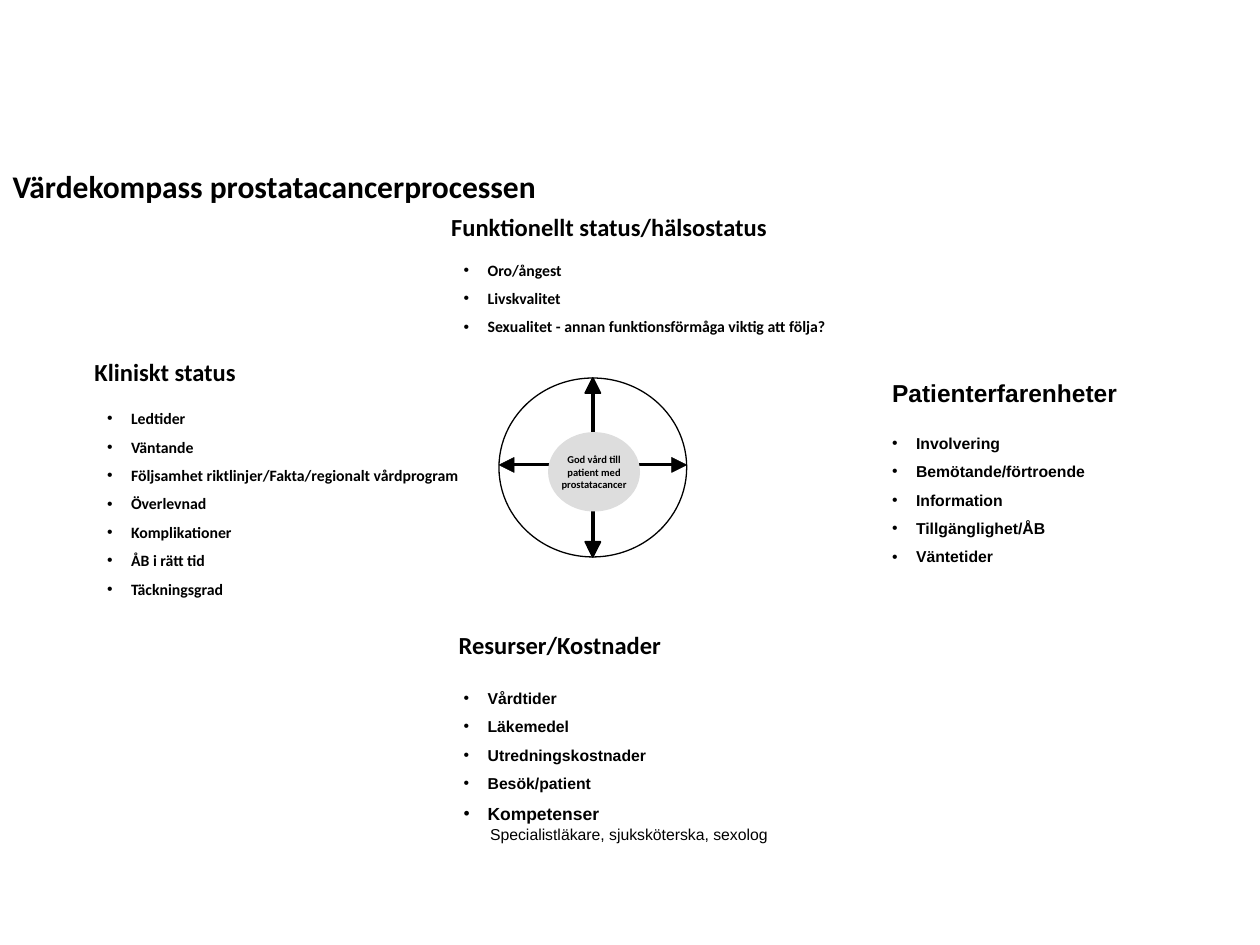
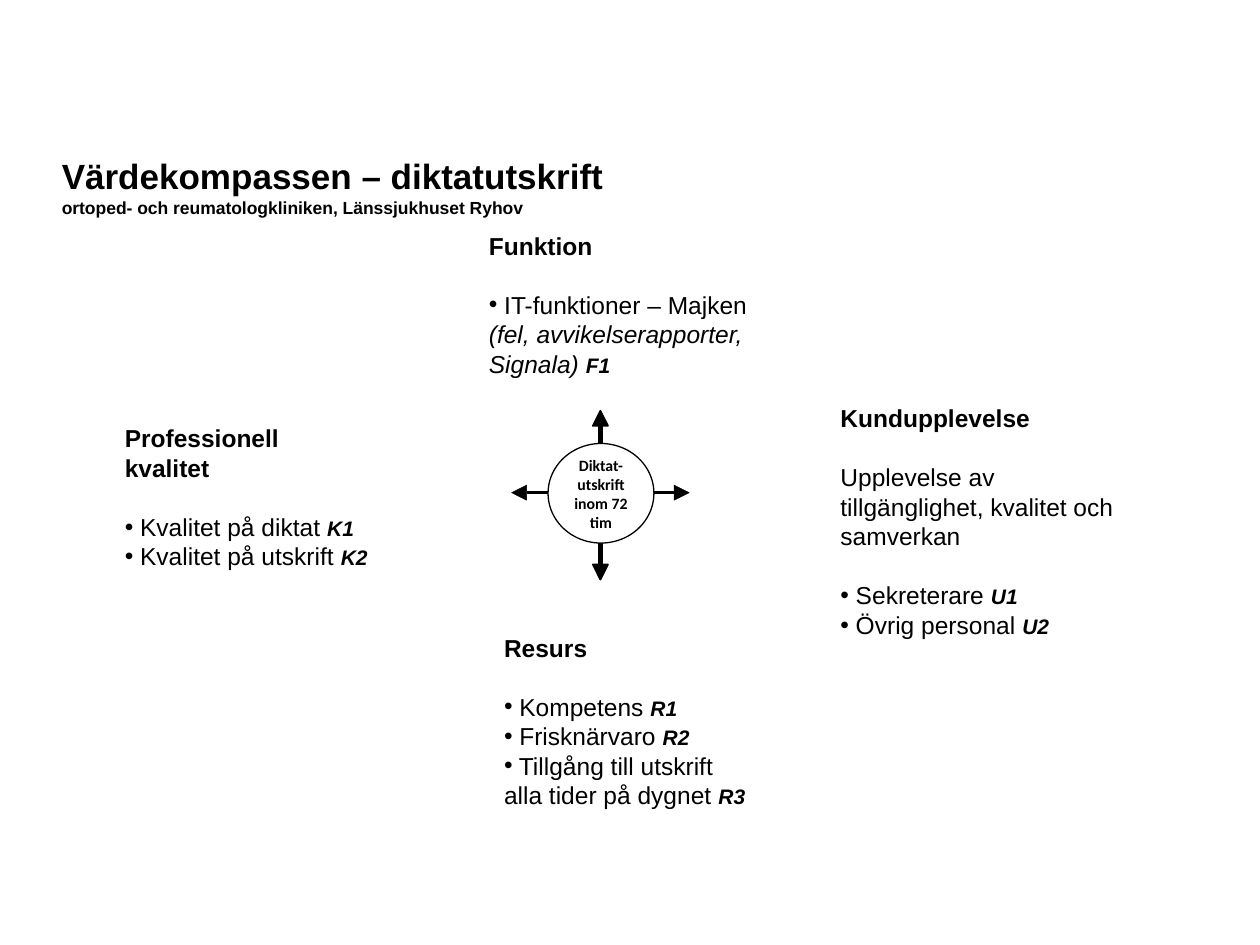
from dataclasses import dataclass

from lxml.etree import SubElement
from pptx import Presentation
from pptx.dml.color import RGBColor
from pptx.enum.shapes import MSO_CONNECTOR, MSO_SHAPE
from pptx.enum.text import MSO_ANCHOR, MSO_AUTO_SIZE, PP_ALIGN
from pptx.oxml.ns import qn
from pptx.util import Inches, Pt

INK = "000000"
PAPER = "FFFFFF"
HUB_GREY = "DDDDDD"
COMPARISON_LAYOUT = 4
HANG = 0.19
AXIS_LIFT = 0.02
HEAD_LENGTH = 0.12
HEAD_HALF = 0.06
INSETS = (0.1, 0.05)


@dataclass
class Line:
    spans: list
    bullet: bool = False
    margin: float = 0
    hang: float = 0
    spacing: float = 1
    before: float = 0
    align: PP_ALIGN = PP_ALIGN.LEFT


def colour(hex_code):
    return RGBColor.from_string(hex_code)


def place(shape, box):
    shape.left, shape.top, shape.width, shape.height = map(Inches, box)


def set_bullet(para, line):
    properties = para._p.get_or_add_pPr()
    properties.set("marL", str(Inches(line.margin)))
    properties.set("indent", str(-Inches(line.hang)))
    if line.bullet:
        SubElement(properties, qn("a:buFont")).set("typeface", "Arial")
        SubElement(properties, qn("a:buChar")).set("char", "•")
    else:
        SubElement(properties, qn("a:buNone"))


def write(shape, lines, font, insets=INSETS, anchor=MSO_ANCHOR.TOP, wrap=True):
    frame = shape.text_frame
    frame.auto_size = MSO_AUTO_SIZE.NONE
    frame.word_wrap = wrap
    frame.vertical_anchor = anchor
    frame.margin_left = frame.margin_right = Inches(insets[0])
    frame.margin_top = frame.margin_bottom = Inches(insets[1])
    for number, line in enumerate(lines):
        para = frame.add_paragraph() if number else frame.paragraphs[0]
        para.alignment = line.align
        para.line_spacing = line.spacing
        para.space_before = Pt(line.before)
        para.space_after = Pt(0)
        set_bullet(para, line)
        for text, size, style in line.spans:
            span = para.add_run()
            span.text = text
            span.font.name = font
            span.font.size = Pt(size)
            span.font.bold = "b" in style
            span.font.italic = "i" in style
            span.font.color.rgb = colour(INK)


def add_title(page, box, lines, font, anchor):
    place(page.shapes.title, box)
    write(page.shapes.title, lines, font, anchor=anchor)


def add_list(page, slot, box, lines, font, insets=INSETS):
    body = page.placeholders[slot]
    place(body, box)
    write(body, lines, font, insets)


def add_heading(page, box, text):
    label = page.shapes.add_textbox(*map(Inches, box))
    write(label, [heading(text)], "Calibri", (0, 0))


def heading(text):
    return Line([(text, 14, "b")])


def spaced_items(texts, size=9):
    return [Line([(text, size, "b")], True, HANG, HANG, 1.5) for text in texts]


def coded_items(*items):
    return [Line([(f" {text} ", 14, ""), (code, 12, "bi")], True)
            for text, code in items]


def after_gap(lines, gap):
    lines[0].before = gap
    return lines


def add_oval(page, box, fill=None, outlined=True):
    oval = page.shapes.add_shape(MSO_SHAPE.OVAL, *map(Inches, box))
    oval.shadow.inherit = False
    if fill:
        oval.fill.solid()
        oval.fill.fore_color.rgb = colour(fill)
    else:
        oval.fill.background()
    if outlined:
        oval.line.color.rgb = colour(INK)
        oval.line.width = Pt(0.75)
    else:
        oval.line.fill.background()
    return oval


def add_arrowhead(page, tip, direction, outline):
    x, y = tip
    across, down = direction
    base_x, base_y = x - across * HEAD_LENGTH, y - down * HEAD_LENGTH
    side_x, side_y = down * HEAD_HALF, across * HEAD_HALF
    points = [(base_x + side_x, base_y + side_y), (base_x - side_x, base_y - side_y)]
    builder = page.shapes.build_freeform(Inches(x), Inches(y))
    builder.add_line_segments([tuple(map(Inches, point)) for point in points])
    head = builder.convert_to_shape()
    head.shadow.inherit = False
    head.fill.solid()
    head.fill.fore_color.rgb = colour(INK)
    head.line.color.rgb = colour(INK)
    head.line.width = Pt(outline)


def add_double_arrow(page, start, end, direction, width, outline):
    across, down = (step * HEAD_LENGTH for step in direction)
    shaft = page.shapes.add_connector(
        MSO_CONNECTOR.STRAIGHT,
        Inches(start[0] + across), Inches(start[1] + down),
        Inches(end[0] - across), Inches(end[1] - down))
    shaft.line.color.rgb = colour(INK)
    shaft.line.width = Pt(width)
    SubElement(shaft._element.spPr, qn("a:effectLst"))
    add_arrowhead(page, start, [-step for step in direction], outline)
    add_arrowhead(page, end, direction, outline)


def add_compass(page, box, hub_box, texts, size, fill, ringed):
    left, top, width, height = box
    middle_x = left + width / 2
    axis_y = top + height / 2 - AXIS_LIFT
    if ringed:
        add_oval(page, box)
    add_double_arrow(page, (middle_x, top), (middle_x, top + height),
                     (0, 1), 2.5, 1)
    add_double_arrow(page, (left, axis_y), (left + width, axis_y),
                     (1, 0), 1.75, 0.25)
    hub_left, hub_top, hub_width, hub_height = hub_box
    hub = add_oval(page, (left + hub_left, top + hub_top, hub_width, hub_height),
                   fill, outlined=not ringed)
    lines = [Line([(text, size, "b")], align=PP_ALIGN.CENTER) for text in texts]
    write(hub, lines, "Calibri", (0, 0), MSO_ANCHOR.MIDDLE, wrap=False)


def build_cancer_page(page):
    add_title(page, (0, 1.18, 5.97, 0.59),
              [Line([("Värdekompass prostatacancerprocessen", 18, "b")])],
              "Calibri", MSO_ANCHOR.MIDDLE)
    add_compass(page, (3.96, 3, 1.49, 1.42), (0.39, 0.43, 0.73, 0.63),
                ["God vård till", "patient med", "prostatacancer"],
                6, HUB_GREY, ringed=True)
    add_heading(page, (3.58, 1.68, 2.91, 0.24), "Funktionellt status/hälsostatus")
    add_heading(page, (3.64, 5, 2.44, 0.24), "Resurser/Kostnader")
    add_heading(page, (0.75, 2.83, 2.84, 0.24), "Kliniskt status")

    add_list(page, 1, (3.58, 1.94, 3.5, 0.78), spaced_items([
        "Oro/ångest", "Livskvalitet",
        "Sexualitet - annan funktionsförmåga viktig att följa?"]), "Calibri")
    add_list(page, 2, (7.08, 3, 2.44, 1.51), [
        heading("Patienterfarenheter"),
        *after_gap(spaced_items([
            "Involvering", "Bemötande/förtroende", "Information",
            "Tillgänglighet/ÅB", "Väntetider"]), 9.5)], "Arial", (0, 0))
    add_list(page, 3, (3.58, 5.34, 2.64, 1.64), [
        *spaced_items(["Vårdtider", "Läkemedel", "Utredningskostnader",
                       "Besök/patient"]),
        *spaced_items(["Kompetenser"], 10),
        Line([("Specialistläkare, sjuksköterska, sexolog", 9, "")], margin=0.21),
    ], "Arial")
    add_list(page, 4, (0.75, 3.12, 3.07, 2.12), spaced_items([
        "Ledtider", "Väntande",
        "Följsamhet riktlinjer/Fakta/regionalt vårdprogram", "Överlevnad",
        "Komplikationer", "ÅB i rätt tid", "Täckningsgrad"]), "Calibri")


def build_dictation_page(page):
    add_title(page, (0.39, 1.18, 9.21, 0.6), [
        Line([("Värdekompassen – diktatutskrift", 20, "b")]),
        Line([("ortoped- och reumatologkliniken, Länssjukhuset Ryhov", 10, "b")]),
    ], "Arial", MSO_ANCHOR.TOP)
    gap = 17
    add_list(page, 1, (0.89, 3.31, 2.13, 1.23), [
        heading("Professionell kvalitet"),
        *after_gap(coded_items(("Kvalitet på diktat", "K1"),
                               ("Kvalitet på utskrift", "K2")), gap)], "Arial")
    add_list(page, 2, (3.78, 1.78, 2.28, 1.26), [
        heading("Funktion"),
        Line([(" IT-funktioner – Majken ", 14, ""),
              ("(fel, avvikelserapporter, Signala) ", 14, "i"),
              ("F1", 12, "bi")], True, before=gap)], "Arial")
    add_list(page, 3, (3.9, 4.97, 2.21, 1.7), [
        heading("Resurs"),
        *after_gap(coded_items(
            ("Kompetens", "R1"), ("Frisknärvaro", "R2"),
            ("Tillgång till utskrift alla tider på dygnet", "R3")), gap)], "Arial")
    add_list(page, 4, (6.57, 3.15, 2.44, 2.11), [
        heading("Kundupplevelse"),
        Line([("Upplevelse av tillgänglighet, kvalitet och samverkan", 14, "")],
             before=gap),
        *after_gap(coded_items(("Sekreterare", "U1"),
                               ("Övrig personal", "U2")), gap)], "Arial")
    add_compass(page, (4.06, 3.26, 1.41, 1.34), (0.29, 0.26, 0.84, 0.79),
                ["Diktat-", "utskrift", "inom 72", "tim"],
                9, PAPER, ringed=False)


def main():
    deck = Presentation()
    deck.slide_width, deck.slide_height = Inches(10), Inches(7.5)
    for build in (build_cancer_page, build_dictation_page):
        build(deck.slides.add_slide(deck.slide_layouts[COMPARISON_LAYOUT]))
    deck.save("out.pptx")


if __name__ == "__main__":
    main()
